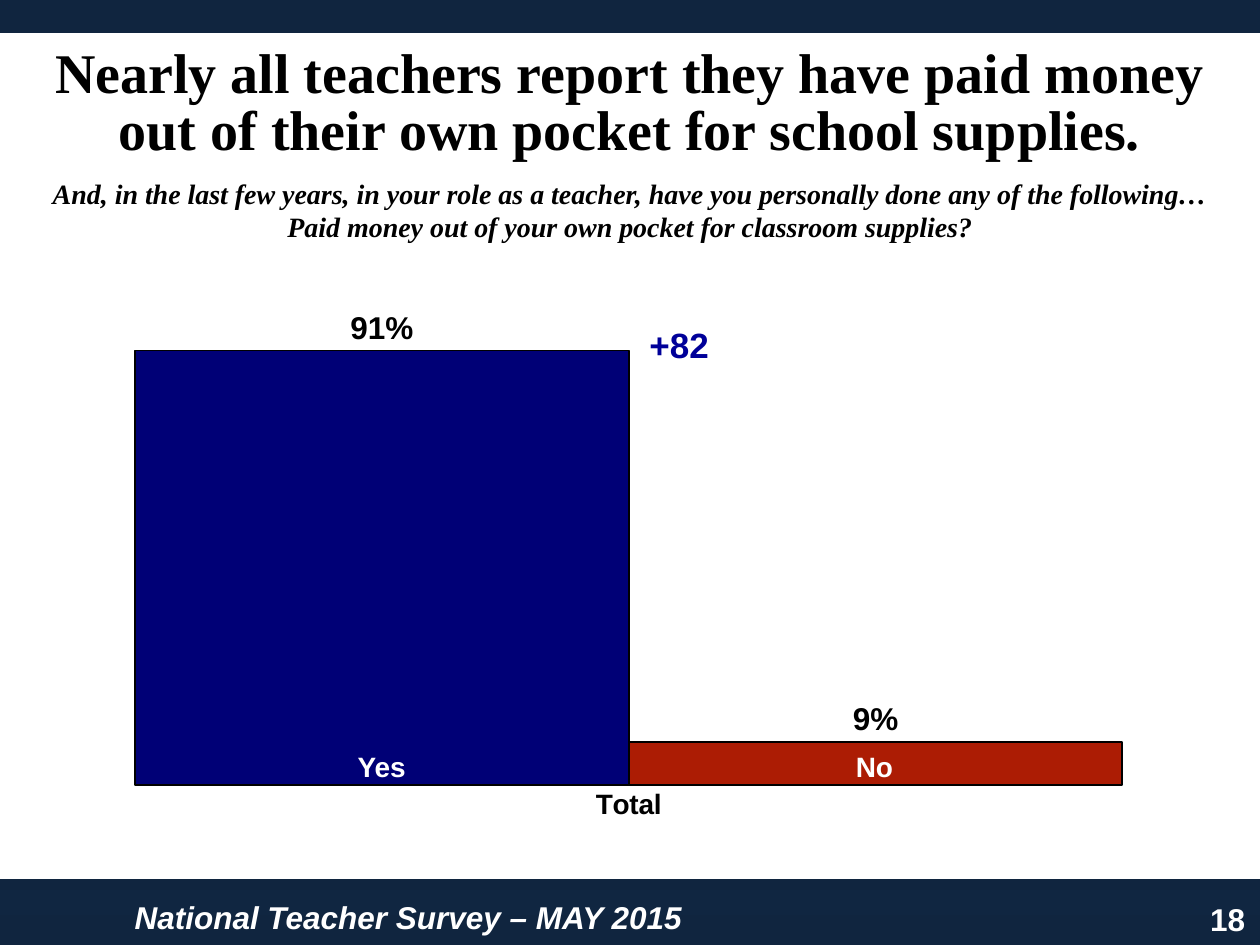
import copy
from dataclasses import dataclass

import lxml.etree
import pptx
import pptx.chart.data
import pptx.dml.color
import pptx.enum.chart
import pptx.enum.shapes
import pptx.enum.text
import pptx.oxml
import pptx.oxml.ns
import pptx.util

Inches = pptx.util.Inches
Pt = pptx.util.Pt
RGBColor = pptx.dml.color.RGBColor
qn = pptx.oxml.ns.qn
Align = pptx.enum.text.PP_ALIGN

NAVY = RGBColor(0x10, 0x25, 0x3F)
STEEL = RGBColor(0x17, 0x37, 0x5E)
WHITE = RGBColor(0xFF, 0xFF, 0xFF)
BLACK = RGBColor(0, 0, 0)
YES_BLUE = RGBColor(0, 0, 0x76)
NO_RED = RGBColor(0xAC, 0x1C, 0x04)
MARGIN_BLUE = RGBColor(0, 0, 0x99)
SERIF = "Times New Roman"
SANS = "Arial"


@dataclass
class Box:
    left: float
    top: float
    width: float
    height: float

    def lengths(self) -> list:
        return [Inches(v) for v in (self.left, self.top, self.width, self.height)]


@dataclass
class Answer:
    label: str
    series: str
    share: float
    color: RGBColor
    label_box: Box


ANSWERS = [
    Answer("Yes", "Series 1", 0.91, YES_BLUE, Box(1.06, 5.9, 3.94, 0.37)),
    Answer("No", "Series 2", 0.09, NO_RED, Box(4.97, 5.9, 3.94, 0.37)),
]


def add_text(s, box: Box, text: str, *, size: int, color: RGBColor = BLACK,
             font: str = SANS, italic: bool = False, align=Align.CENTER,
             spacing: float = 1.0) -> None:
    tf = s.shapes.add_textbox(*box.lengths()).text_frame
    tf.word_wrap = True
    tf.auto_size = pptx.enum.text.MSO_AUTO_SIZE.SHAPE_TO_FIT_TEXT
    for i, line in enumerate(text.split("\n")):
        p = tf.add_paragraph() if i else tf.paragraphs[0]
        p.alignment = align
        p.line_spacing = spacing
        r = p.add_run()
        r.text = line
        r.font.name = font
        r.font.size = Pt(size)
        r.font.bold = True
        r.font.italic = italic
        r.font.color.rgb = color


def paint_background(s) -> None:
    fill = s.background.fill
    fill.gradient()
    fill.gradient_angle = 90
    for stop, color in zip(fill.gradient_stops, (NAVY, STEEL)):
        stop.color.rgb = color
    stops = next(s.element.iter(qn("a:gsLst")))
    stops.append(copy.deepcopy(stops[0]))
    for stop, position in zip(stops, (0, 50000, 100000)):
        stop.set("pos", str(position))


def add_panel(s, box: Box) -> None:
    sp = s.shapes.add_shape(pptx.enum.shapes.MSO_SHAPE.RECTANGLE, *box.lengths())
    sp.shadow.inherit = False
    sp.fill.solid()
    sp.fill.fore_color.rgb = WHITE
    sp.line.color.rgb = NAVY
    sp.line.width = Pt(6)


def set_plot_area(chart, box: Box) -> None:
    area = next(chart.element.iter(qn("c:plotArea")))
    for old in area.findall(qn("c:layout")):
        area.remove(old)
    layout = lxml.etree.Element(qn("c:layout"))
    manual = lxml.etree.SubElement(layout, qn("c:manualLayout"))
    settings = [("layoutTarget", "inner"), ("xMode", "edge"), ("yMode", "edge"),
                ("x", box.left), ("y", box.top), ("w", box.width), ("h", box.height)]
    for tag, value in settings:
        lxml.etree.SubElement(manual, qn(f"c:{tag}")).set("val", str(value))
    area.insert(0, layout)


def clear_chart_frame(chart) -> None:
    frame = pptx.oxml.parse_xml(
        f'<c:spPr {pptx.oxml.ns.nsdecls("c", "a")}>'
        "<a:noFill/><a:ln><a:noFill/></a:ln></c:spPr>")
    chart.element.find(qn("c:txPr")).addprevious(frame)


def add_answer_chart(s, box: Box) -> None:
    data = pptx.chart.data.CategoryChartData(number_format="0%")
    data.categories = ["Total"]
    for answer in ANSWERS:
        data.add_series(answer.series, [answer.share])
    kind = pptx.enum.chart.XL_CHART_TYPE.COLUMN_CLUSTERED
    chart = s.shapes.add_chart(kind, *box.lengths(), data).chart
    chart.has_title = False
    chart.has_legend = False
    chart.font.name = SANS
    chart.font.size = Pt(18)
    chart.font.color.rgb = BLACK
    clear_chart_frame(chart)
    set_plot_area(chart, Box(0.015, 0.336, 0.969, 0.545))

    for axis in (chart.category_axis, chart.value_axis):
        axis.has_major_gridlines = False
        axis.major_tick_mark = pptx.enum.chart.XL_TICK_MARK.NONE
        axis.minor_tick_mark = pptx.enum.chart.XL_TICK_MARK.NONE
        axis.format.line.fill.background()
    font = chart.category_axis.tick_labels.font
    font.name, font.size, font.bold = SANS, Pt(16), True
    font.color.rgb = BLACK
    axis = chart.value_axis
    axis.tick_label_position = pptx.enum.chart.XL_TICK_LABEL_POSITION.NONE
    axis.minimum_scale, axis.maximum_scale, axis.major_unit = 0, 1.05, 0.1

    plot = chart.plots[0]
    plot.gap_width = 50
    plot.overlap = 0
    plot.vary_by_categories = False
    for series, answer in zip(plot.series, ANSWERS):
        series.format.fill.solid()
        series.format.fill.fore_color.rgb = answer.color
        series.format.line.color.rgb = BLACK
        series.format.line.width = Pt(1)
        labels = series.data_labels
        labels.show_value = True
        labels.number_format = "0%"
        labels.number_format_is_linked = False
        labels.position = pptx.enum.chart.XL_LABEL_POSITION.OUTSIDE_END
        labels.font.name, labels.font.size, labels.font.bold = SANS, Pt(18), True
        labels.font.color.rgb = BLACK


def main() -> None:
    prs = pptx.Presentation()
    prs.slide_width, prs.slide_height = Inches(10), Inches(7.5)
    s = prs.slides.add_slide(prs.slide_layouts[6])
    paint_background(s)
    add_panel(s, Box(-0.1, 0.22, 10.19, 6.8))
    add_text(s, Box(8.98, 7.09, 1, 0.4), "18", size=18, color=WHITE, align=Align.RIGHT)
    add_text(s, Box(0.97, 7.08, 7.81, 0.4), "National Teacher Survey – MAY 2015",
             size=18, color=WHITE, italic=True, align=Align.LEFT)
    add_answer_chart(s, Box(-0.06, -0.2, 10.11, 7.3))
    add_text(s, Box(0, 1.35, 10, 0.64),
             "And, in the last few years, in your role as a teacher, "
             "have you personally done any of the following…\n"
             "Paid money out of your own pocket for classroom supplies?",
             size=16, font=SERIF, italic=True)
    for answer in ANSWERS:
        add_text(s, answer.label_box, answer.label, size=16, color=WHITE)
    add_text(s, Box(0, 0.33, 10, 1.02),
             "Nearly all teachers report they have paid money "
             "out of their own pocket for school supplies.",
             size=32, font=SERIF, spacing=0.85)
    add_text(s, Box(4.72, 2.52, 1.34, 0.44), "+82", size=20, color=MARGIN_BLUE)
    prs.save("out.pptx")


if __name__ == "__main__":
    main()
